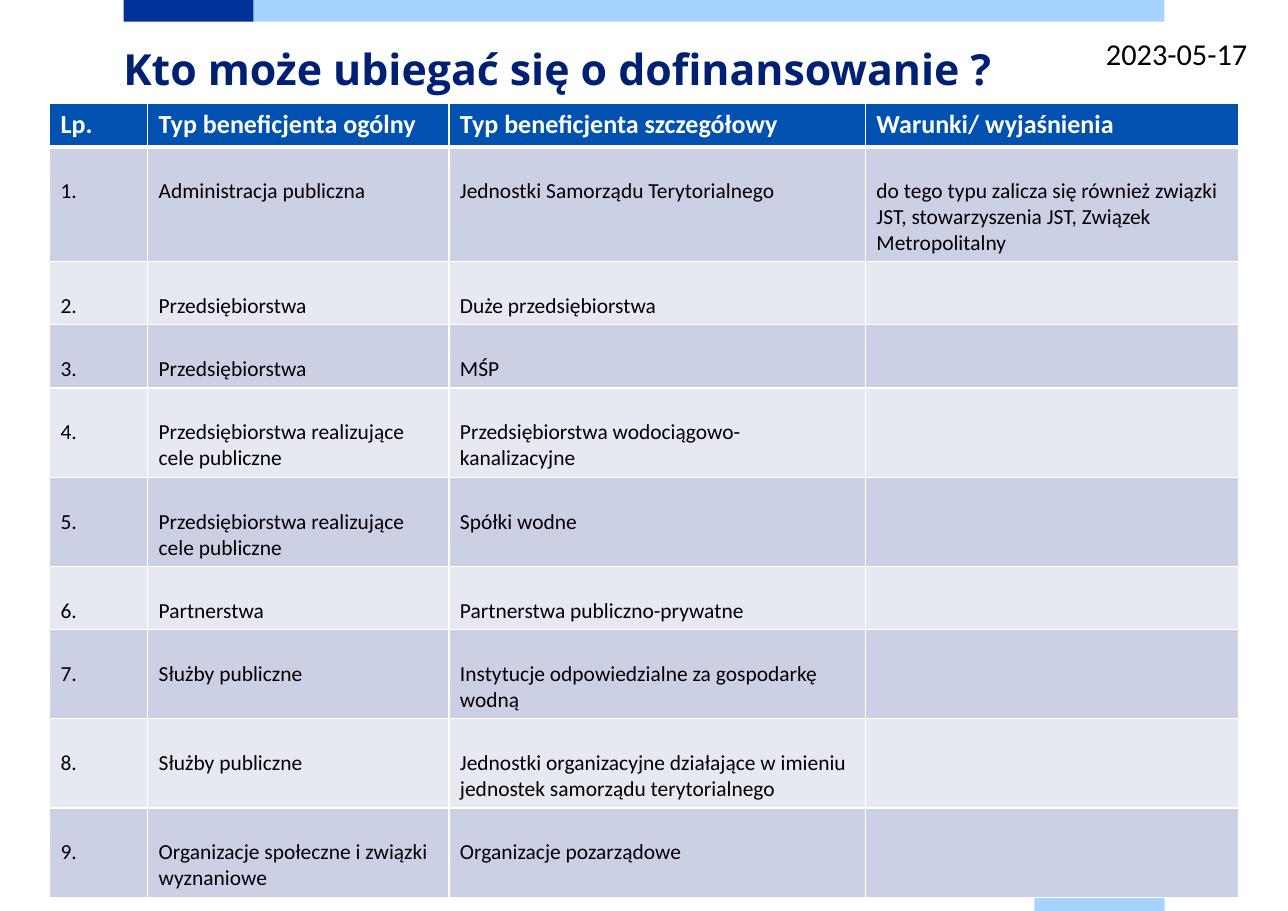
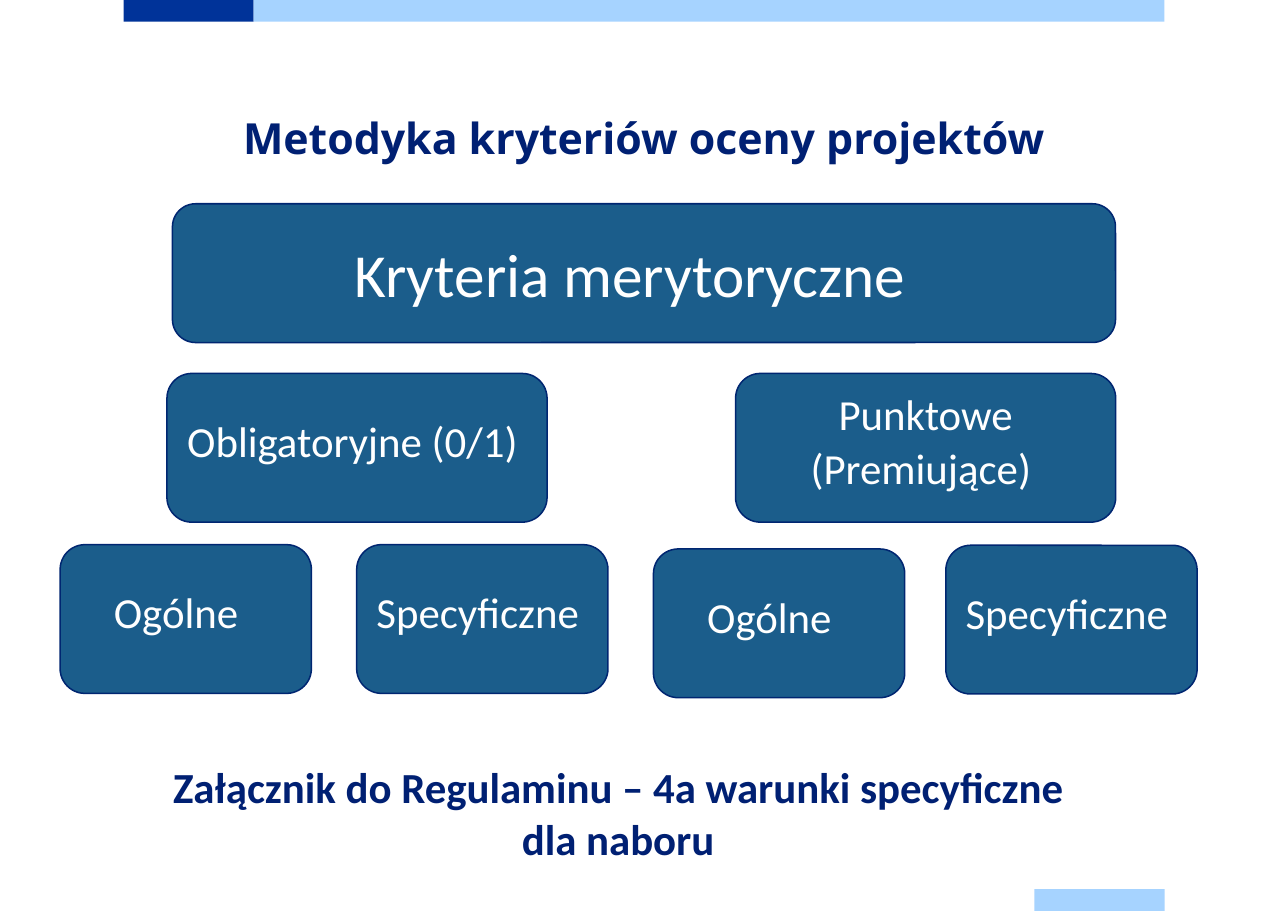
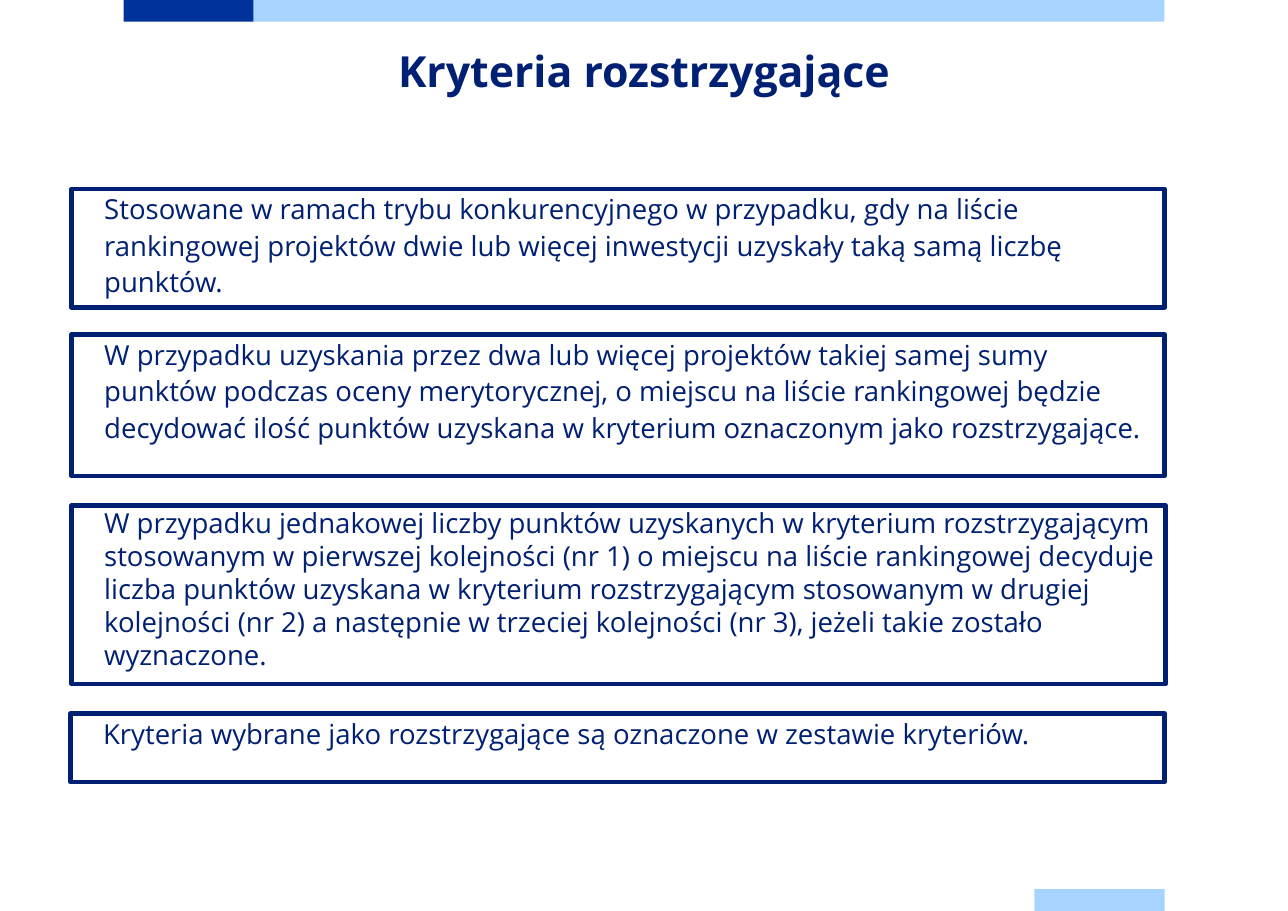
from dataclasses import dataclass

from lxml.etree import SubElement
from pptx import Presentation
from pptx.dml.color import RGBColor
from pptx.enum.shapes import MSO_SHAPE
from pptx.enum.text import MSO_ANCHOR, MSO_AUTO_SIZE, PP_ALIGN
from pptx.oxml.ns import qn
from pptx.shapes.autoshape import Shape
from pptx.slide import Slide
from pptx.table import _Cell
from pptx.text.text import TextFrame
from pptx.util import Pt

NAVY, WHITE, BLACK = "002073", "FFFFFF", "000000"
DARK_BAND, LIGHT_BAND = "003399", "A6D3FF"
HEADER_FILL, ROW_FILLS = "0051B0", ("CCD0E4", "E7E9F2")
NODE_FILL, NODE_LINE = "1B5D8B", "002671"
BODY_FONT, TITLE_FONT = "Calibri", "Open Sans"
CELL_INSET = 3.6
CELL_TOP = 20.6
NUMBER_INDENT = 25


@dataclass(frozen=True)
class Area:
    """A rectangle on the slide, in points."""

    left: float
    top: float
    width: float
    height: float

    def lengths(self) -> tuple[Pt, Pt, Pt, Pt]:
        """Return the position and size as lengths."""
        return Pt(self.left), Pt(self.top), Pt(self.width), Pt(self.height)


@dataclass(frozen=True)
class Style:
    """The look of a piece of text."""

    size: float
    color: str
    font: str = BODY_FONT
    bold: bool = False
    align: PP_ALIGN = PP_ALIGN.LEFT
    spacing: float | Pt | None = None
    space_before: float = 0


@dataclass(frozen=True)
class Node:
    """A rounded box of the criteria hierarchy."""

    label: str
    area: Area
    style: Style
    right_inset: float = 7.2
    left_inset: float = 7.2


@dataclass(frozen=True)
class Rule:
    """A framed rule for deciding ties."""

    text: str
    area: Area
    spacing: float = 1.1


@dataclass(frozen=True)
class Beneficiary:
    """A table row: general type, detailed type, row height and remarks."""

    general: str
    detailed: str
    height: float
    remarks: str = ""


BANDS = (
    (Area(80.8, 0, 85, 14.2), DARK_BAND),
    (Area(165.8, 0, 595.2, 14.2), LIGHT_BAND),
    (Area(676, 581.2, 85, 14.2), LIGHT_BAND),
)

HEADINGS = ("Lp.", "Typ beneficjenta ogólny", "Typ beneficjenta szczegółowy", "Warunki/ wyjaśnienia")
COLUMN_WIDTHS = (64.1, 196.9, 272.2, 243.6)
HEADER_HEIGHT = 28.4
ONE_LINE, TWO_LINES, THREE_LINES = 41.4, 58.3, 74.8
BENEFICIARIES = (
    Beneficiary("Administracja publiczna", "Jednostki Samorządu Terytorialnego", THREE_LINES,
                "do tego typu zalicza się również związki JST, stowarzyszenia JST, Związek Metropolitalny"),
    Beneficiary("Przedsiębiorstwa", "Duże przedsiębiorstwa", ONE_LINE),
    Beneficiary("Przedsiębiorstwa", "MŚP", ONE_LINE),
    Beneficiary("Przedsiębiorstwa realizujące cele publiczne",
                "Przedsiębiorstwa wodociągowo-kanalizacyjne", TWO_LINES),
    Beneficiary("Przedsiębiorstwa realizujące cele publiczne", "Spółki wodne", TWO_LINES),
    Beneficiary("Partnerstwa", "Partnerstwa publiczno-prywatne", ONE_LINE),
    Beneficiary("Służby publiczne", "Instytucje odpowiedzialne za gospodarkę wodną", TWO_LINES),
    Beneficiary("Służby publiczne",
                "Jednostki organizacyjne działające w imieniu jednostek samorządu terytorialnego", TWO_LINES),
    Beneficiary("Organizacje społeczne i związki wyznaniowe", "Organizacje pozarządowe", TWO_LINES),
)

ROOT_STYLE = Style(40, WHITE, align=PP_ALIGN.CENTER)
BRANCH_STYLE = Style(28, WHITE, align=PP_ALIGN.CENTER, spacing=Pt(24), space_before=11)
NODES = (
    Node("Kryteria merytoryczne", Area(112.7, 133.2, 616.3, 90.7), ROOT_STYLE, 25.2),
    Node("Obligatoryjne (0/1)", Area(109.1, 244.1, 248.4, 97.2), BRANCH_STYLE, 6, 0),
    Node("Punktowe\n(Premiujące) ", Area(480.7, 244.1, 248.4, 97.2), BRANCH_STYLE),
    Node("Ogólne", Area(39.3, 356, 164.2, 97.2), BRANCH_STYLE, 19.8),
    Node("Specyficzne", Area(233.1, 356, 164.2, 97.2), BRANCH_STYLE, 13.2),
    Node("Ogólne", Area(427, 358.8, 164.2, 97.2), BRANCH_STYLE, 19.8),
    Node("Specyficzne", Area(618.1, 356.4, 164.2, 97.2), BRANCH_STYLE, 13.2),
)

RULES = (
    Rule("Stosowane w ramach trybu konkurencyjnego w przypadku, gdy na liście rankingowej projektów "
         "dwie lub więcej inwestycji uzyskały taką samą liczbę punktów.",
         Area(46.8, 123.5, 714.2, 77.4)),
    Rule("W przypadku uzyskania przez dwa lub więcej projektów takiej samej sumy punktów podczas oceny "
         "merytorycznej, o miejscu na liście rankingowej będzie decydować ilość punktów uzyskana "
         "w kryterium oznaczonym jako rozstrzygające.",
         Area(46.8, 218.7, 714.2, 92.5)),
    Rule("W przypadku jednakowej liczby punktów uzyskanych w kryterium rozstrzygającym stosowanym "
         "w pierwszej kolejności (nr 1) o miejscu na liście rankingowej decyduje liczba punktów uzyskana "
         "w kryterium rozstrzygającym stosowanym w drugiej kolejności (nr 2) a następnie w trzeciej "
         "kolejności (nr 3), jeżeli takie zostało wyznaczone.",
         Area(46.8, 330.5, 715, 116.6), 1.0),
    Rule("Kryteria wybrane jako rozstrzygające są oznaczone w zestawie kryteriów.",
         Area(46.1, 466.3, 715, 44.9)),
)


def rgb(color: str) -> RGBColor:
    """Turn a hex string into a colour."""
    return RGBColor.from_string(color)


def write(frame: TextFrame, text: str, style: Style) -> None:
    """Set the text of a frame and format its paragraphs and runs."""
    frame.text = text
    for index, paragraph in enumerate(frame.paragraphs):
        paragraph.alignment = style.align
        paragraph.line_spacing = style.spacing
        if index:
            paragraph.space_before = Pt(style.space_before)
        for run in paragraph.runs:
            run.font.name = style.font
            run.font.size = Pt(style.size)
            run.font.bold = style.bold
            run.font.color.rgb = rgb(style.color)


def set_insets(frame: TextFrame, left: float, top: float, right: float, bottom: float) -> None:
    """Set the four inner margins of a frame."""
    frame.margin_left, frame.margin_top = Pt(left), Pt(top)
    frame.margin_right, frame.margin_bottom = Pt(right), Pt(bottom)


def add_box(slide: Slide, preset: MSO_SHAPE, area: Area, fill: str | None = None,
            line: str | None = None, line_width: float = 1) -> Shape:
    """Add a flat preset shape."""
    box = slide.shapes.add_shape(preset, *area.lengths())
    box.shadow.inherit = False
    if fill:
        box.fill.solid()
        box.fill.fore_color.rgb = rgb(fill)
    else:
        box.fill.background()
    if line:
        box.line.color.rgb = rgb(line)
        box.line.width = Pt(line_width)
    else:
        box.line.fill.background()
    return box


def add_label(slide: Slide, text: str, area: Area, style: Style) -> None:
    """Add a wrapping text box."""
    frame = slide.shapes.add_textbox(*area.lengths()).text_frame
    frame.word_wrap = True
    write(frame, text, style)


def add_titled_slide(deck: Presentation, heading: str, area: Area,
                     align: PP_ALIGN = PP_ALIGN.CENTER) -> Slide:
    """Add a slide with the shared bands and title style."""
    slide = deck.slides.add_slide(deck.slide_layouts[5])
    for band_area, color in BANDS:
        add_box(slide, MSO_SHAPE.RECTANGLE, band_area, color)
    title = slide.shapes.title
    title.left, title.top, title.width, title.height = area.lengths()
    frame = title.text_frame
    set_insets(frame, 0, 0, 0, 0)
    frame.auto_size = MSO_AUTO_SIZE.NONE
    frame.vertical_anchor = MSO_ANCHOR.TOP
    write(frame, heading, Style(28, NAVY, TITLE_FONT, True, align, Pt(36)))
    return slide


def fill_cell(cell: _Cell, text: str, fill: str, style: Style, top_inset: float) -> None:
    """Colour a table cell and write its text."""
    cell.fill.solid()
    cell.fill.fore_color.rgb = rgb(fill)
    if text:
        cell.margin_top = Pt(top_inset)
        write(cell.text_frame, text, style)


def underline_cell(cell: _Cell, color: str, width: float) -> None:
    """Draw the bottom border of a table cell."""
    properties = cell._tc.get_or_add_tcPr()
    border = SubElement(properties, qn("a:lnB"), w=str(Pt(width)))
    SubElement(SubElement(border, qn("a:solidFill")), qn("a:srgbClr"), val=color)
    properties.insert(0, border)


def number_cell(cell: _Cell, number: int) -> None:
    """Turn the paragraph of a table cell into an automatically numbered item."""
    properties = cell.text_frame.paragraphs[0]._p.get_or_add_pPr()
    properties.set("marL", str(Pt(NUMBER_INDENT)))
    properties.set("indent", str(-Pt(NUMBER_INDENT)))
    SubElement(properties, qn("a:buFont"), typeface=BODY_FONT)
    SubElement(properties, qn("a:buAutoNum"), type="arabicPeriod", startAt=str(number))


def add_beneficiary_table(slide: Slide) -> None:
    """Add the table of beneficiary types."""
    heights = (HEADER_HEIGHT, *(entry.height for entry in BENEFICIARIES))
    area = Area(32.4, 67.7, sum(COLUMN_WIDTHS), sum(heights))
    table = slide.shapes.add_table(len(heights), len(HEADINGS), *area.lengths()).table
    for column, width in zip(table.columns, COLUMN_WIDTHS):
        column.width = Pt(width)
    for row, height in zip(table.rows, heights):
        row.height = Pt(height)
    for cell, heading in zip(table.rows[0].cells, HEADINGS):
        fill_cell(cell, heading, HEADER_FILL, Style(17, WHITE, bold=True), CELL_INSET)
        underline_cell(cell, WHITE, 3)
    for number, entry in enumerate(BENEFICIARIES, start=1):
        texts = (" ", entry.general, entry.detailed, entry.remarks)
        for cell, text in zip(table.rows[number].cells, texts):
            fill_cell(cell, text, ROW_FILLS[(number - 1) % 2], Style(14, BLACK), CELL_TOP)
        number_cell(table.cell(number, 0), number)


def add_node(slide: Slide, node: Node) -> None:
    """Add one box of the criteria hierarchy."""
    frame = add_box(slide, MSO_SHAPE.ROUNDED_RECTANGLE, node.area, NODE_FILL, NODE_LINE).text_frame
    frame.word_wrap = True
    frame.vertical_anchor = MSO_ANCHOR.MIDDLE
    set_insets(frame, node.left_inset, CELL_INSET, node.right_inset, CELL_INSET)
    write(frame, node.label, node.style)


def add_rule(slide: Slide, rule: Rule) -> None:
    """Add one framed rule."""
    frame = add_box(slide, MSO_SHAPE.RECTANGLE, rule.area, line=NAVY, line_width=3).text_frame
    frame.word_wrap = True
    frame.vertical_anchor = MSO_ANCHOR.TOP
    set_insets(frame, 21.3, 0, 0, 0)
    write(frame, rule.text, Style(18, NAVY, TITLE_FONT, spacing=rule.spacing))


def main() -> None:
    """Build and save the presentation."""
    deck = Presentation()
    deck.slide_width, deck.slide_height = Pt(841.68), Pt(595.44)

    eligibility = add_titled_slide(deck, "Kto może ubiegać się o dofinansowanie ?",
                                   Area(80.6, 25.2, 680.4, 85), PP_ALIGN.LEFT)
    add_label(eligibility, "2023-05-17", Area(715.7, 19.4, 141.8, 28.8), Style(19.8, BLACK))
    add_beneficiary_table(eligibility)

    methodology = add_titled_slide(deck, "Metodyka kryteriów oceny projektów",
                                   Area(80.3, 70.6, 680.4, 85))
    for node in NODES:
        add_node(methodology, node)
    add_label(methodology, "Załącznik do Regulaminu – 4a warunki specyficzne dla naboru",
              Area(89.3, 493.9, 629.3, 74.9), Style(28, NAVY, bold=True, align=PP_ALIGN.CENTER))

    tie_breaking = add_titled_slide(deck, "Kryteria rozstrzygające", Area(80.6, 27, 680.4, 70.6))
    for rule in RULES:
        add_rule(tie_breaking, rule)

    deck.save("out.pptx")


if __name__ == "__main__":
    main()
